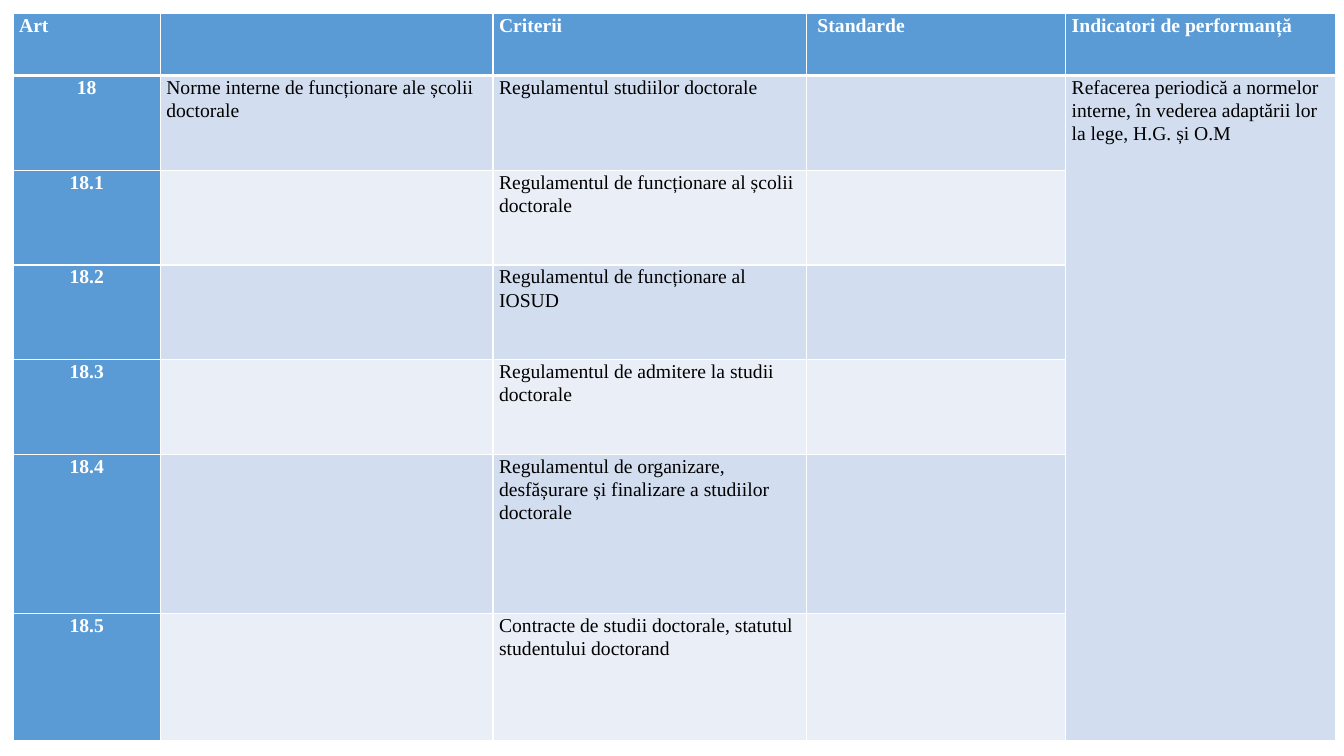
from lxml.etree import SubElement
from pptx import Presentation
from pptx.dml.color import RGBColor
from pptx.enum.text import PP_ALIGN
from pptx.oxml.ns import qn
from pptx.util import Inches, Pt

HEADS = ["Art", "", "Criterii", " Standarde", "Indicatori de performanță"]
NORM = "Norme interne de funcționare ale școlii doctorale"
GOAL = "Refacerea periodică a normelor interne, în vederea adaptării lor la lege, H.G. și O.M"
RULES = [
    ("18", "Regulamentul studiilor doctorale"),
    ("18.1", "Regulamentul de funcționare al școlii doctorale"),
    ("18.2", "Regulamentul de funcționare al IOSUD"),
    ("18.3", "Regulamentul de admitere la studii doctorale"),
    ("18.4", "Regulamentul de organizare, desfășurare și finalizare a studiilor doctorale"),
    ("18.5", "Contracte de studii doctorale, statutul studentului doctorand"),
]
WIDTHS = [1.46, 3.3, 3.11, 2.57, 2.68]
HEIGHTS = [0.62] + [0.94] * 4 + [1.58, 1.26]

BLUE = RGBColor(0x5B, 0x9B, 0xD5)
BANDS = [RGBColor(0xEA, 0xEF, 0xF7), RGBColor(0xD2, 0xDE, 0xEF)]
WHITE = RGBColor(255, 255, 255)
BLACK = RGBColor(0, 0, 0)


def add_edge(cell, side, width):
    line = SubElement(cell._tc.get_or_add_tcPr(), qn("a:ln" + side), w=str(Pt(width)))
    fill = SubElement(line, qn("a:solidFill"))
    SubElement(fill, qn("a:srgbClr"), val=str(WHITE))


def set_cell(cell, text, row, col):
    strong = row == 0 or col == 0
    wide = {"T": row == 1, "B": row == 0}
    for side in "LRTB":
        add_edge(cell, side, 3 if wide.get(side) else 1)
    cell.fill.solid()
    cell.fill.fore_color.rgb = BLUE if strong else BANDS[row % 2]
    cell.margin_left = cell.margin_right = Inches(0.06)
    cell.margin_top = cell.margin_bottom = 0
    if not text:
        return
    cell.text_frame.text = text
    para = cell.text_frame.paragraphs[0]
    para.line_spacing = 1.07
    if col == 0 and row > 0:
        para.alignment = PP_ALIGN.CENTER
    font = para.runs[0].font
    font.name = "Times New Roman"
    font.size = Pt(14)
    font.bold = strong
    font.color.rgb = WHITE if strong else BLACK


def main():
    deck = Presentation()
    deck.slide_width, deck.slide_height = Inches(13.33), Inches(7.5)
    slide = deck.slides.add_slide(deck.slide_layouts[6])
    rows = [HEADS] + [[art, "", rule, "", ""] for art, rule in RULES]
    rows[1][1], rows[1][4] = NORM, GOAL
    table = slide.shapes.add_table(
        len(rows), len(HEADS), Inches(0.13), Inches(0.13),
        Inches(sum(WIDTHS)), Inches(sum(HEIGHTS))).table
    for col, width in zip(table.columns, WIDTHS):
        col.width = Inches(width)
    for row, height in zip(table.rows, HEIGHTS):
        row.height = Inches(height)
    for r, row in enumerate(rows):
        for c, text in enumerate(row):
            set_cell(table.cell(r, c), text, r, c)
    table.cell(1, 4).merge(table.cell(len(RULES), 4))
    deck.save("out.pptx")


if __name__ == "__main__":
    main()
